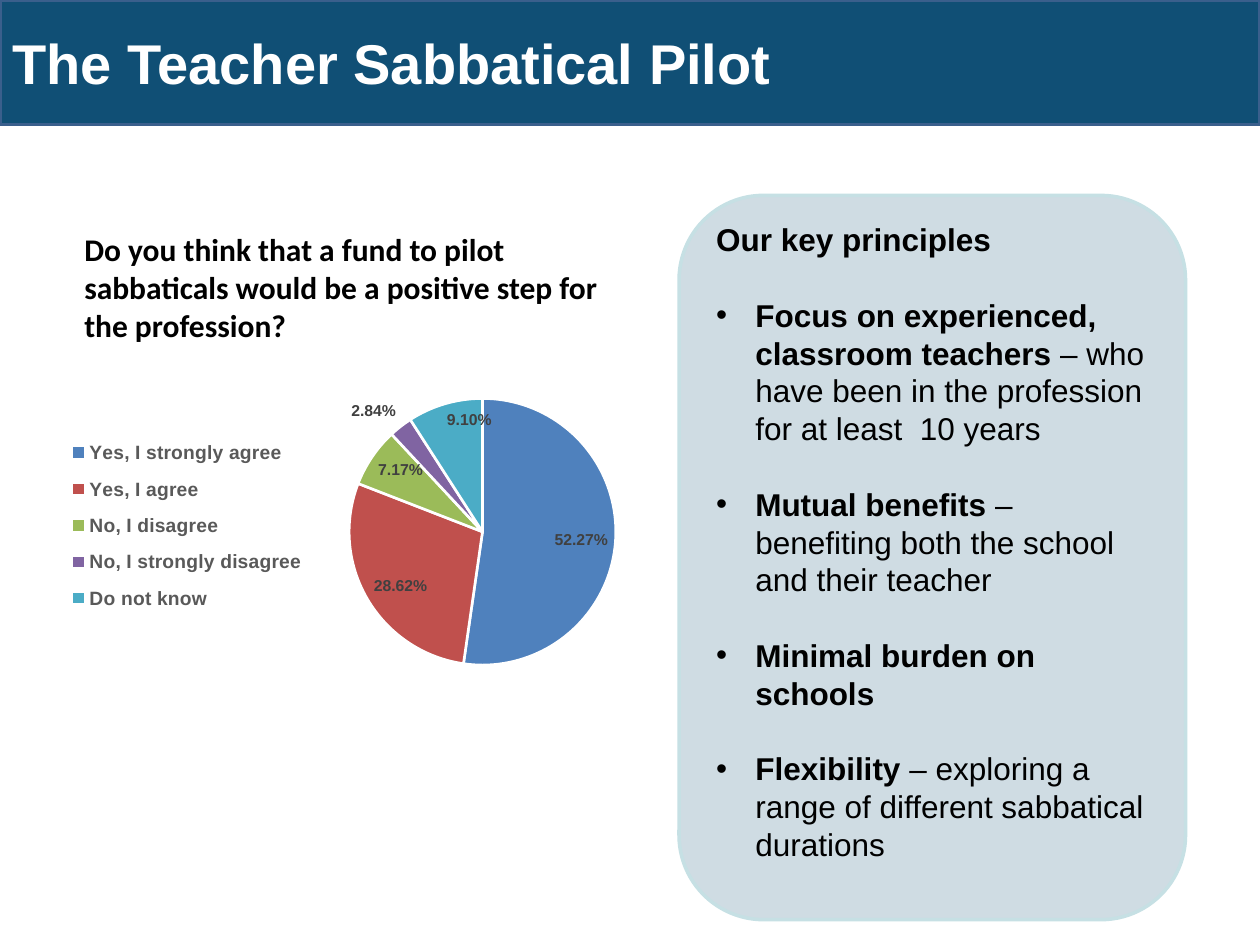
from dataclasses import dataclass
from lxml.etree import SubElement
from pptx import Presentation
from pptx.chart.data import CategoryChartData
from pptx.dml.color import RGBColor as Rgb
from pptx.enum.chart import XL_CHART_TYPE as Kind, XL_LABEL_POSITION as Spot
from pptx.enum.chart import XL_LEGEND_POSITION as Side
from pptx.enum.shapes import MSO_SHAPE as Form
from pptx.enum.text import MSO_ANCHOR as Anchor, PP_ALIGN as Align
from pptx.oxml import parse_xml
from pptx.oxml.ns import nsdecls, qn
from pptx.util import Cm, Pt


@dataclass(frozen=True)
class Theme:
    navy: str = "104F75"
    edge: str = "3A5F8C"
    panel: str = "CFDCE3"
    rim: str = "C6E0E4"
    white: str = "FFFFFF"
    black: str = "000000"
    grey: str = "595959"
    dark: str = "404040"
    slices: tuple = ("4F81BD", "C0504D", "9BBB59", "8064A2", "4BACC6")
    sans: str = "Arial"
    soft: str = "Calibri"
    title: int = 32
    body: int = 18
    base: int = 10
    key: int = 11
    label: int = 9
    pitch: float = 21.6


THEME = Theme()
TITLE = "The Teacher Sabbatical Pilot"
QUERY = ("Do you think that a fund to pilot sabbaticals would be "
         "a positive step for the profession?")
HEAD = "Our key principles"
POINTS = [
    ("Focus on experienced, classroom teachers ",
     "– who have been in the profession for at least  10 years"),
    ("Mutual benefits ", "– benefiting both the school and their teacher"),
    ("Minimal burden on schools", ""),
    ("Flexibility ", "– exploring a range of different sabbatical durations"),
]
VOTES = {
    "Yes, I strongly agree": 0.5227,
    "Yes, I agree": 0.2862,
    "No, I disagree": 0.0717,
    "No, I strongly disagree": 0.0284,
    "Do not know": 0.091,
}


def put(item, values):
    for name, value in values.items():
        setattr(item, name, value)


def style(font, size, tint, bold=True, face=THEME.sans):
    put(font, {"name": face, "size": Pt(size), "bold": bold})
    font.color.rgb = Rgb.from_string(tint)


def write(para, text, size, tint, bold=True, face=THEME.sans):
    run = para.add_run()
    run.text = text
    style(run.font, size, tint, bold, face)


def block(slide, form, box, fill, line):
    shape = slide.shapes.add_shape(form, *map(Cm, box))
    shape.shadow.inherit = False
    shape.fill.solid()
    shape.fill.fore_color.rgb = Rgb.from_string(fill)
    shape.line.color.rgb = Rgb.from_string(line)
    shape.line.width = Pt(2)
    shape.text_frame.word_wrap = True
    return shape


def banner(slide, box):
    frame = block(slide, Form.RECTANGLE, box, THEME.navy, THEME.edge).text_frame
    frame.vertical_anchor = Anchor.MIDDLE
    para = frame.paragraphs[0]
    para.alignment = Align.LEFT
    write(para, TITLE, THEME.title, THEME.white)


def bullet(para):
    props = para._p.get_or_add_pPr()
    indent = Cm(0.79)
    props.set("marL", str(indent))
    props.set("indent", str(-indent))
    SubElement(props, qn("a:buFont")).set("typeface", THEME.sans)
    SubElement(props, qn("a:buChar")).set("char", "•")


def panel(slide, box):
    shape = block(slide, Form.ROUNDED_RECTANGLE, box, THEME.panel, THEME.rim)
    frame = shape.text_frame
    put(frame, {"vertical_anchor": Anchor.TOP, "margin_top": 0})
    para = frame.paragraphs[0]
    put(para, {"alignment": Align.LEFT, "line_spacing": Pt(THEME.pitch)})
    write(para, HEAD, THEME.body, THEME.black)
    for lead, rest in POINTS:
        para = frame.add_paragraph()
        put(para, {"alignment": Align.LEFT, "line_spacing": Pt(THEME.pitch),
                   "space_before": Pt(THEME.pitch)})
        bullet(para)
        write(para, lead, THEME.body, THEME.black)
        if rest:
            write(para, rest, THEME.body, THEME.black, False)


def layout(box, inner=False):
    target = '<c:layoutTarget val="inner"/>' if inner else ""
    modes = "".join(f'<c:{axis}Mode val="edge"/>' for axis in "xy")
    sizes = "".join(f'<c:{side} val="{size}"/>'
                    for side, size in zip("xywh", box))
    return parse_xml(f'<c:layout {nsdecls("c")}><c:manualLayout>{target}'
                     f'{modes}{sizes}</c:manualLayout></c:layout>')


def place(chart):
    area = chart._chartSpace.find(".//" + qn("c:plotArea"))
    for old in area.findall(qn("c:layout")):
        area.remove(old)
    area.insert(0, layout((0.55, 0.08, 0.42, 0.63), True))
    legend = chart.legend._element
    for old in legend.findall(qn("c:layout")):
        legend.remove(old)
    legend.find(qn("c:legendPos")).addnext(layout((0.1, 0.15, 0.39, 0.46)))


def pie(slide, box):
    data = CategoryChartData(number_format="0.00%")
    data.categories = list(VOTES)
    data.add_series("Series 1", list(VOTES.values()))
    chart = slide.shapes.add_chart(Kind.PIE, *map(Cm, box), data).chart
    put(chart, {"has_title": False, "has_legend": True})
    style(chart.font, THEME.base, THEME.black, False)
    put(chart.legend, {"position": Side.BOTTOM, "include_in_layout": False})
    style(chart.legend.font, THEME.key, THEME.grey)
    place(chart)
    plot = chart.plots[0]
    plot.vary_by_categories = True
    series = plot.series[0]
    for spot, tint in enumerate(THEME.slices):
        part = series.points[spot].format
        part.fill.solid()
        part.fill.fore_color.rgb = Rgb.from_string(tint)
        part.line.color.rgb = Rgb.from_string(THEME.white)
        part.line.width = Pt(1.5)
    labels = series.data_labels
    put(labels, {"show_value": True, "show_percentage": False,
                 "number_format": "0.00%", "number_format_is_linked": False,
                 "position": Spot.INSIDE_END})
    style(labels.font, THEME.label, THEME.dark)
    small = series.points[3].data_label
    style(small.font, THEME.label, THEME.dark)
    small.position = Spot.OUTSIDE_END


def query(slide, box):
    frame = slide.shapes.add_textbox(*map(Cm, box)).text_frame
    frame.word_wrap = True
    write(frame.paragraphs[0], QUERY, THEME.body, THEME.black, True, THEME.soft)


def main():
    deck = Presentation()
    put(deck, {"slide_width": Cm(25.4), "slide_height": Cm(19.05)})
    slide = deck.slides.add_slide(deck.slide_layouts[6])
    banner(slide, (0, 0, 25.4, 2.51))
    pie(slide, (0, 7.32, 12.8, 8.61))
    query(slide, (1.45, 4.52, 11.81, 2.59))
    panel(slide, (13.69, 3.94, 10.21, 14.6))
    deck.save("out.pptx")


if __name__ == "__main__":
    main()
